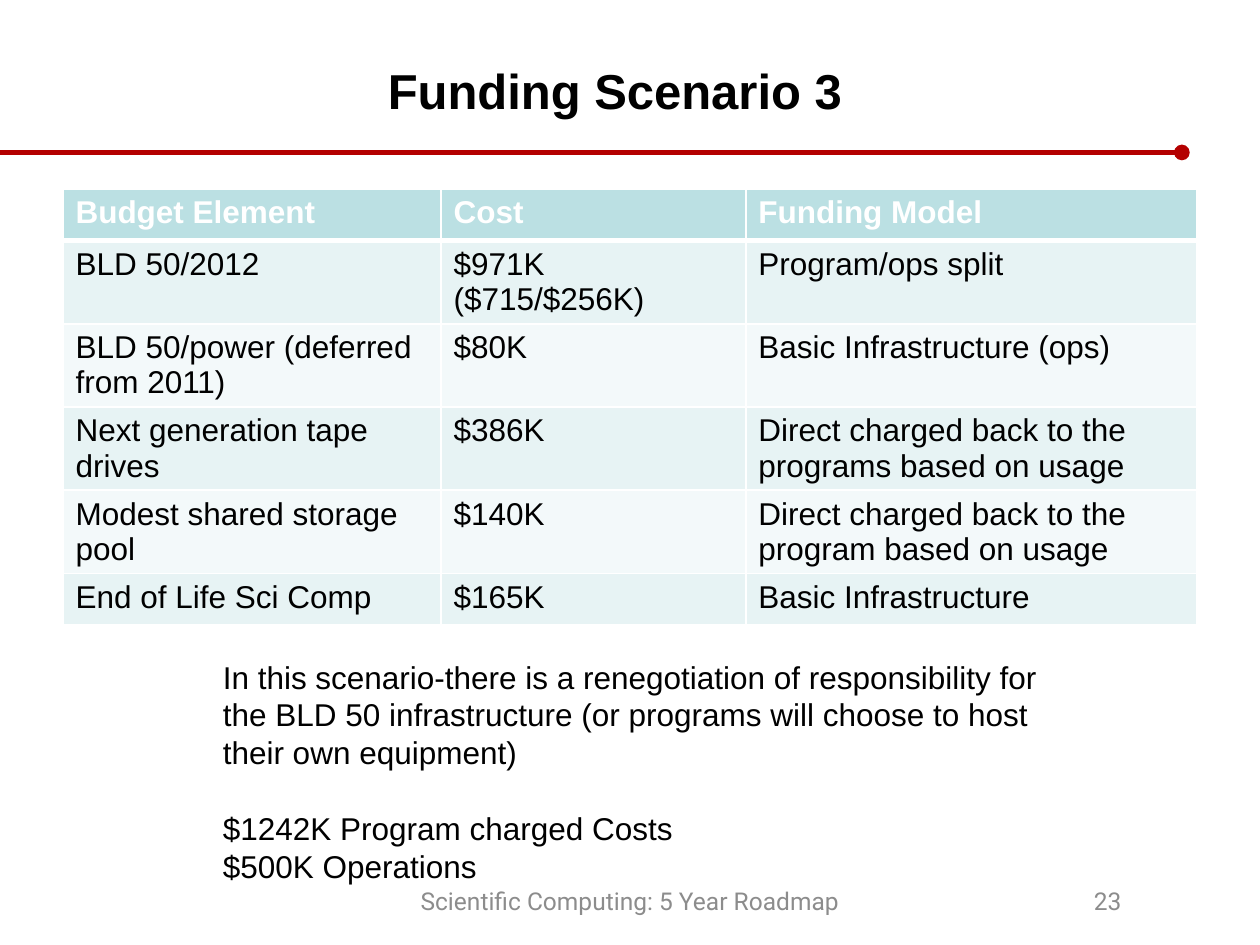
from lxml import etree
from pptx import Presentation
from pptx.dml.color import RGBColor
from pptx.enum.shapes import MSO_CONNECTOR
from pptx.enum.text import MSO_ANCHOR, PP_ALIGN
from pptx.oxml.ns import qn
from pptx.util import Inches, Pt

LEFT, CENTER, RIGHT = PP_ALIGN.LEFT, PP_ALIGN.CENTER, PP_ALIGN.RIGHT
TOP, MIDDLE = MSO_ANCHOR.TOP, MSO_ANCHOR.MIDDLE

TITLE = "Funding Scenario 3"
BUDGET = [
    ("Budget Element", "Cost", "Funding Model"),
    ("BLD 50/2012", "$971K ($715/$256K)", "Program/ops split"),
    ("BLD 50/power (deferred from 2011)", "$80K", "Basic Infrastructure (ops)"),
    ("Next generation tape drives", "$386K",
     "Direct charged back to the programs based on usage"),
    ("Modest shared storage pool", "$140K",
     "Direct charged back to the program based on usage"),
    ("End of Life Sci Comp", "$165K", "Basic Infrastructure"),
]
COLUMN_WIDTHS = [3, 2.42, 3.58]
ROW_HEIGHT = 0.41
SUMMARY = [
    "In this scenario-there is a renegotiation of responsibility for the BLD 50 "
    "infrastructure (or programs will choose to host their own equipment)",
    "$1242K Program charged Costs",
    "$500K Operations",
]
FOOTER = "Scientific Computing: 5 Year Roadmap"
PAGE_NUMBER = "23"

WHITE, BLACK, GRAY, RED = "FFFFFF", "000000", "8C8C8C", "B40000"
HEADER_FILL, BAND_FILLS = "BBE0E3", ("E7F3F4", "F3F9FA")


def rgb(value):
    return RGBColor.from_string(value)


def write(frame, *texts, size=18, font="Arial", color=BLACK, bold=False,
          align=LEFT, anchor=TOP):
    frame.word_wrap = True
    frame.vertical_anchor = anchor
    for index, text in enumerate(texts):
        paragraph = frame.paragraphs[0] if index == 0 else frame.add_paragraph()
        paragraph.alignment = align
        run = paragraph.add_run()
        run.text = text
        run.font.size = Pt(size)
        run.font.name = font
        run.font.bold = bold
        run.font.color.rgb = rgb(color)


def add_text(slide, box, *texts, **style):
    frame = slide.shapes.add_textbox(*map(Inches, box)).text_frame
    write(frame, *texts, **style)
    return frame


def set_borders(cell, **widths):
    properties = cell._tc.get_or_add_tcPr()
    for position, side in enumerate("LRTB"):
        border = etree.Element(qn(f"a:ln{side}"), w=str(Pt(widths.get(side, 1))))
        fill = etree.SubElement(border, qn("a:solidFill"))
        etree.SubElement(fill, qn("a:srgbClr"), val=WHITE)
        properties.insert(position, border)


def add_rule(slide):
    rule = slide.shapes.add_connector(
        MSO_CONNECTOR.STRAIGHT, 0, Inches(1.21), Inches(9.38), Inches(1.21))
    rule.line.color.rgb = rgb(RED)
    rule.line.width = Pt(3)
    etree.SubElement(rule.line._get_or_add_ln(), qn("a:tailEnd"), type="oval")
    etree.SubElement(rule._element.spPr, qn("a:effectLst"))


def add_budget(slide):
    table = slide.shapes.add_table(
        len(BUDGET), len(COLUMN_WIDTHS), Inches(0.5), Inches(1.5),
        Inches(sum(COLUMN_WIDTHS)), Inches(ROW_HEIGHT * len(BUDGET))).table
    for column, width in zip(table.columns, COLUMN_WIDTHS):
        column.width = Inches(width)
    for r, entries in enumerate(BUDGET):
        header = r == 0
        for c, entry in enumerate(entries):
            cell = table.cell(r, c)
            write(cell.text_frame, entry, bold=header,
                  color=WHITE if header else BLACK)
            cell.fill.solid()
            cell.fill.fore_color.rgb = rgb(
                HEADER_FILL if header else BAND_FILLS[(r - 1) % 2])
            set_borders(cell, T=3 if r == 1 else 1, B=3 if header else 1)


def main():
    deck = Presentation()
    deck.slide_width, deck.slide_height = Inches(10), Inches(7.5)
    slide = deck.slides.add_slide(deck.slide_layouts[5])

    add_rule(slide)
    title = slide.shapes.title
    title.left, title.top, title.width, title.height = map(
        Inches, (0.42, 0.25, 8.92, 0.92))
    write(title.text_frame, TITLE, size=28, bold=True, align=CENTER, anchor=MIDDLE)
    add_budget(slide)

    summary = add_text(slide, (1.67, 5.17, 6.67, 1.92), *SUMMARY)
    summary.paragraphs[1].space_before = Pt(21.6)

    small = {"size": 14, "font": "Roboto", "color": GRAY, "anchor": MIDDLE}
    add_text(slide, (7.17, 6.95, 1.83, 0.4), PAGE_NUMBER, align=RIGHT, **small)
    add_text(slide, (3, 6.95, 4, 0.4), FOOTER, align=CENTER, **small)
    deck.save("out.pptx")


if __name__ == "__main__":
    main()
